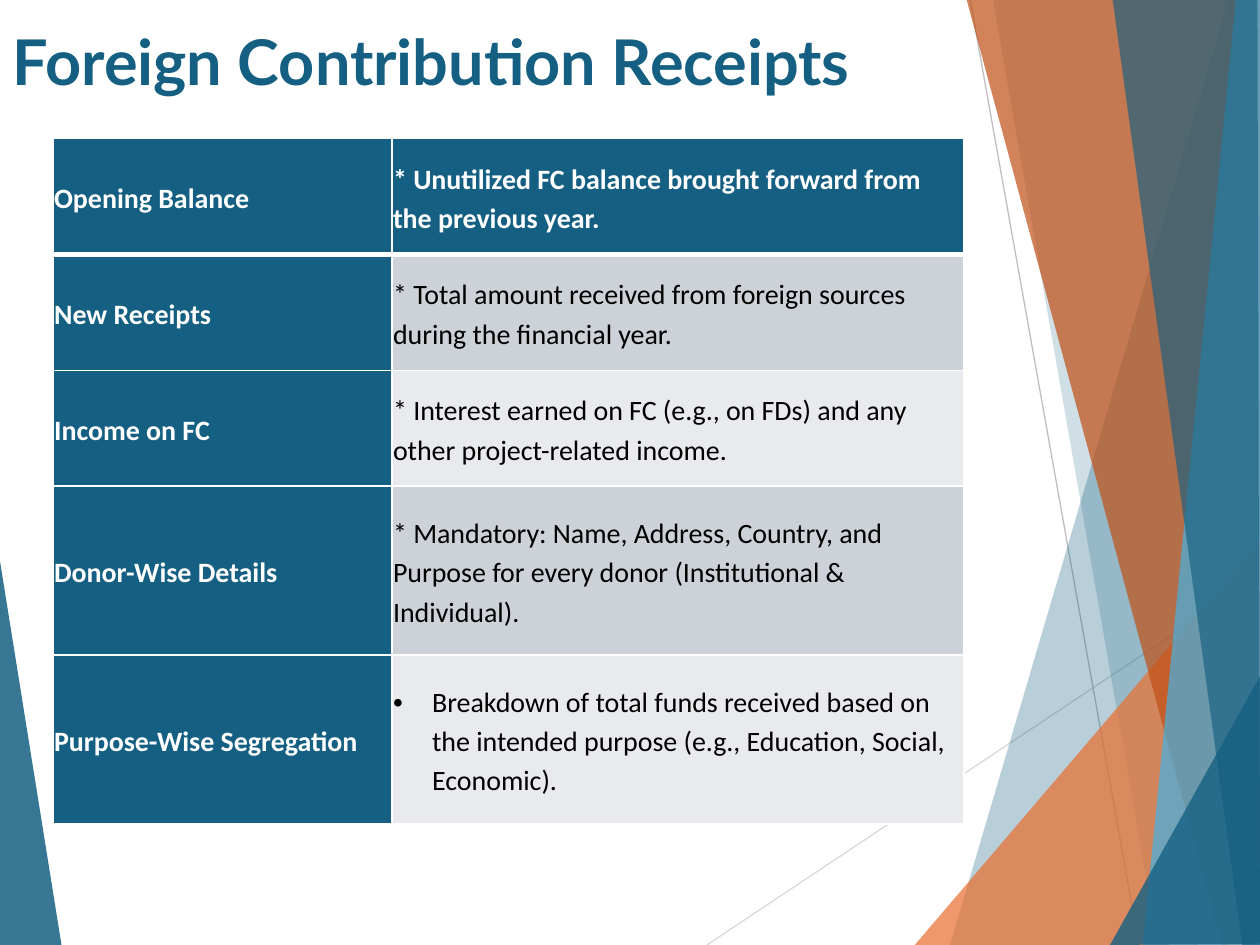
from lxml import etree
from pptx import Presentation
from pptx import util as u
from pptx.dml.color import RGBColor
from pptx.enum import shapes, text
from pptx.oxml.ns import qn

TEAL = RGBColor(0x15, 0x60, 0x82)
ORANGE = RGBColor(0xE9, 0x71, 0x32)
RUST = RGBColor(0xC0, 0x4F, 0x15)
SKY = RGBColor(0x46, 0xB1, 0xE1)
BAND_DARK = RGBColor(0xCC, 0xD2, 0xD8)
BAND_LIGHT = RGBColor(0xE8, 0xEA, 0xED)
PALE_GREY = RGBColor(0xD9, 0xD9, 0xD9)
MID_GREY = RGBColor(0xBF, 0xBF, 0xBF)
WHITE = RGBColor(0xFF, 0xFF, 0xFF)
BLACK = RGBColor(0, 0, 0)

# Background: hairlines as (start, end, colour), facets as (points, colour, opacity %)
HAIRLINES = [
    ((5.61, 7.5), (10.01, 4.57), PALE_GREY),
    ((7.7, 0), (9.04, 7.5), MID_GREY),
]
LEFT_FACET = ([(-0.01, 4.39), (0.49, 7.51), (-0.01, 7.5)], TEAL, 85)
RIGHT_FACETS = [
    ([(9.75, 0), (7.54, 7.5), (10.02, 7.51), (10.01, 0.01)], TEAL, 30),
    ([(7.88, -0.01), (9.19, 7.5), (10.01, 7.5), (10.01, -0.01)], TEAL, 20),
    ([(7.26, 7.5), (10, 4.29), (10.01, 7.5)], ORANGE, 72),
    ([(7.67, -0.01), (9.7, 7.5), (10.01, 7.49), (10.01, -0.01)], RUST, 70),
    ([(9.81, -0.01), (9.07, 7.5), (10.01, 7.5), (10, -0.01)], SKY, 70),
    ([(8.83, -0.01), (9.86, 7.5), (10, 7.5), (9.98, -0.01)], TEAL, 65),
    ([(8.81, 7.5), (10.01, 5.35), (10.01, 7.49)], TEAL, 80),
]

# Receipts: heading, description, row height, bulleted
RECEIPTS = [
    ("Opening Balance",
     "* Unutilized FC balance brought forward from the previous year.", 0.92, False),
    ("New Receipts",
     "* Total amount received from foreign sources during the financial year.", 0.92, False),
    ("Income on FC",
     "* Interest earned on FC (e.g., on FDs) and any other project-related income.",
     0.92, False),
    ("Donor-Wise Details",
     "* Mandatory: Name, Address, Country, and Purpose for every donor "
     "(Institutional & Individual).", 1.34, False),
    ("Purpose-Wise Segregation",
     "Breakdown of total funds received based on the intended purpose "
     "(e.g., Education, Social, Economic).", 1.34, True),
]


def write(frame, words, font="Calibri", size=16, color=BLACK, bold=False,
          spacing=None, after=None, bullet=False):
    paragraph = frame.paragraphs[0]
    paragraph.alignment = text.PP_ALIGN.LEFT
    paragraph.line_spacing = spacing
    paragraph.space_after = after
    run = paragraph.add_run()
    run.text = words
    run.font.name, run.font.size = font, u.Pt(size)
    run.font.bold, run.font.color.rgb = bold, color
    if bullet:
        properties = paragraph._p.get_or_add_pPr()
        indent = u.Inches(0.31)
        properties.set("marL", str(indent))
        properties.set("indent", str(-indent))
        etree.SubElement(properties, qn("a:buFont"), typeface="Arial")
        etree.SubElement(properties, qn("a:buChar"), char="•")


class FacetSlide:
    def __init__(self, slide):
        self.slide = slide
        self.accent = TEAL
        self.border = WHITE

    def facet(self, points, color, opacity):
        corners = [(u.Inches(x), u.Inches(y)) for x, y in points]
        builder = self.slide.shapes.build_freeform(*corners[0])
        builder.add_line_segments(corners[1:], close=True)
        facet = builder.convert_to_shape()
        facet.shadow.inherit = False
        facet.line.fill.background()
        facet.fill.solid()
        facet.fill.fore_color.rgb = color
        tint = facet._element.spPr.find(qn("a:solidFill"))[0]
        etree.SubElement(tint, qn("a:alpha"), val=str(opacity * 1000))

    def hairline(self, start, end, color):
        ends = [u.Inches(value) for value in start + end]
        hairline = self.slide.shapes.add_connector(shapes.MSO_CONNECTOR.STRAIGHT, *ends)
        hairline.line.color.rgb = color
        hairline.line.width = u.Pt(0.75)
        etree.SubElement(hairline._element.spPr, qn("a:effectLst"))

    def title(self, words):
        title = self.slide.shapes.title
        title.left, title.top = u.Inches(0), u.Inches(0.13)
        title.width, title.height = u.Inches(7.98), u.Inches(0.83)
        title.text_frame.vertical_anchor = text.MSO_ANCHOR.TOP
        title.text_frame.word_wrap = True
        write(title.text_frame, words, font="Lato", size=36, color=self.accent, bold=True)
        # Bring the title in front of the background
        title.element.getparent().append(title.element)

    def cell(self, cell, words, fill, header, **style):
        properties = cell._tc.get_or_add_tcPr()
        for side in "LRTB":
            width = u.Pt(3 if header and side == "B" else 1)
            edge = etree.SubElement(properties, qn(f"a:ln{side}"), w=str(width))
            paint = etree.SubElement(edge, qn("a:solidFill"))
            etree.SubElement(paint, qn("a:srgbClr"), val=str(self.border))
        cell.fill.solid()
        cell.fill.fore_color.rgb = fill
        cell.vertical_anchor = text.MSO_ANCHOR.MIDDLE
        cell.margin_left = cell.margin_right = u.Inches(0.01)
        cell.margin_top = cell.margin_bottom = u.Inches(0.01)
        write(cell.text_frame, words, spacing=1.15, after=u.Pt(8), **style)

    def receipts_table(self, receipts, left, top, widths):
        heights = [height for _, _, height, _ in receipts]
        table = self.slide.shapes.add_table(
            len(receipts), len(widths), u.Inches(left), u.Inches(top),
            u.Inches(sum(widths)), u.Inches(sum(heights))).table
        for column, width in zip(table.columns, widths):
            column.width = u.Inches(width)
        for index, (heading, description, height, bullet) in enumerate(receipts):
            table.rows[index].height = u.Inches(height)
            header = index == 0
            band = BAND_DARK if index % 2 else BAND_LIGHT
            self.cell(table.cell(index, 0), heading, self.accent, header,
                      color=WHITE, bold=True)
            self.cell(table.cell(index, 1), description,
                      self.accent if header else band, header,
                      color=WHITE if header else BLACK, bold=header, bullet=bullet)


def main():
    deck = Presentation()
    deck.slide_width, deck.slide_height = u.Inches(10), u.Inches(7.5)
    page = FacetSlide(deck.slides.add_slide(deck.slide_layouts[5]))

    # Background
    page.facet(*LEFT_FACET)
    for hairline in HAIRLINES:
        page.hairline(*hairline)
    for facet in RIGHT_FACETS:
        page.facet(*facet)

    # Content
    page.title("Foreign Contribution Receipts")
    page.receipts_table(RECEIPTS, left=0.42, top=1.1, widths=(2.69, 4.54))

    deck.save("out.pptx")


if __name__ == "__main__":
    main()
